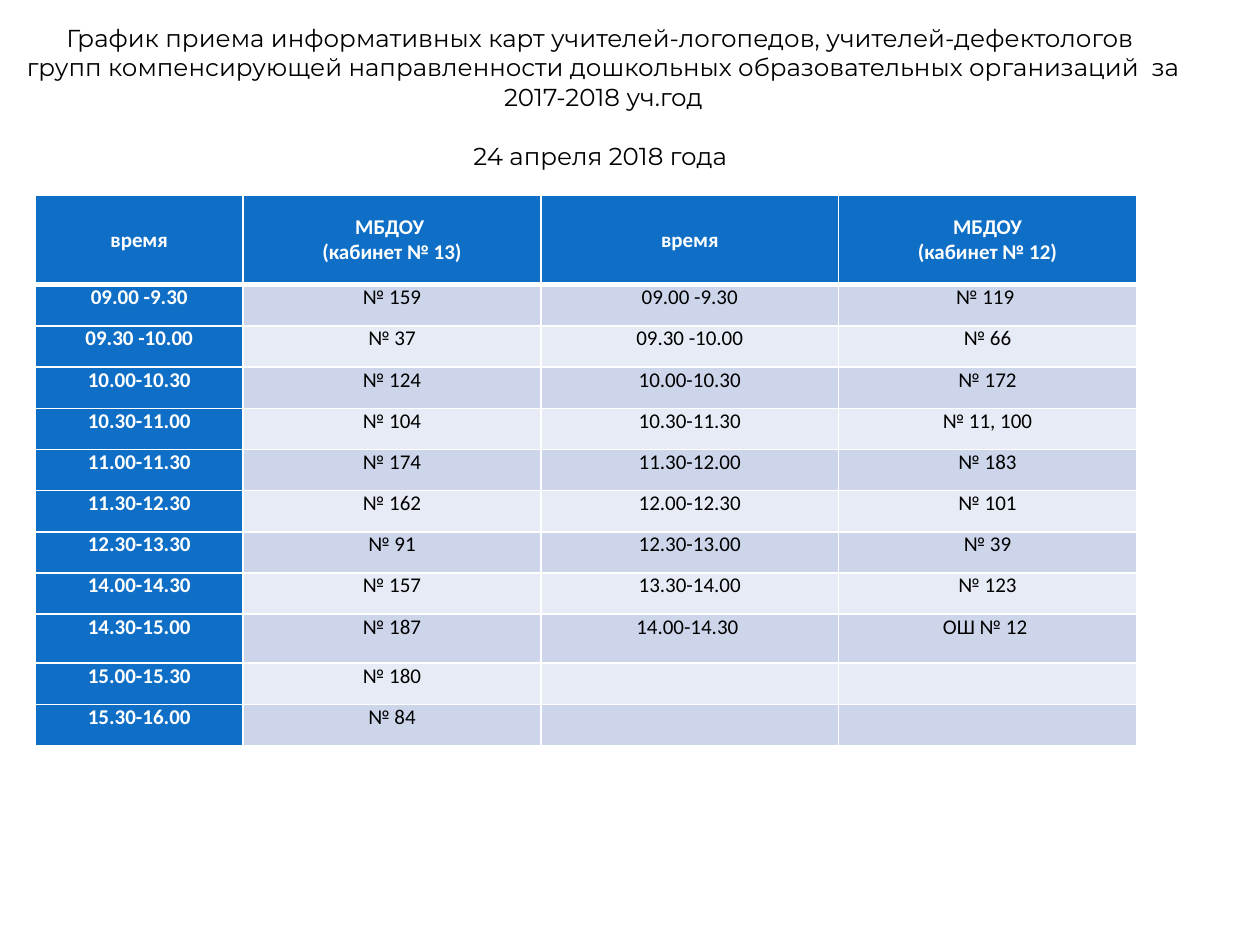
from lxml.etree import SubElement
from pptx import Presentation
from pptx.dml.color import RGBColor
from pptx.enum.text import MSO_ANCHOR as Anchor, MSO_AUTO_SIZE as Fit, PP_ALIGN as Align
from pptx.oxml.ns import qn
from pptx.util import Inches, Pt

WHITE, BLACK, BLUE = "FFFFFF", "000000", "0F6FC6"
BANDS = ["CCD5EA", "E7EBF5"]

TITLE = [
    "График приема информативных карт учителей-логопедов, учителей-дефектологов ",
    "групп компенсирующей направленности дошкольных образовательных организаций  за 2017-2018 уч.год",
    "24 апреля 2018 года ",
]
ROWS = [
    ["время", "МБДОУ \n(кабинет № 13)", "время", "МБДОУ\n(кабинет № 12)"],
    ["09.00 -9.30", "№ 159", "09.00 -9.30", "№ 119 "],
    ["09.30 -10.00", "№ 37", "09.30 -10.00", "№ 66"],
    ["10.00-10.30", "№ 124", "10.00-10.30", "№ 172"],
    ["10.30-11.00", "№ 104", "10.30-11.30", "№ 11, 100"],
    ["11.00-11.30", "№ 174", "11.30-12.00", "№ 183"],
    ["11.30-12.30", "№ 162", "12.00-12.30", "№ 101"],
    ["12.30-13.30", "№ 91", "12.30-13.00", "№ 39"],
    ["14.00-14.30", "№ 157", "13.30-14.00", "№ 123"],
    ["14.30-15.00", "№ 187", "14.00-14.30 ", "ОШ № 12 "],
    ["15.00-15.30", "№ 180", "", ""],
    ["15.30-16.00", "№ 84", "", ""],
]

LEFT, TOP, WIDTH, HEIGHT = 0.28, 1.55, 8.74, 4.37
HEAD, TALL, TALL_ROW = 0.71, 0.39, 9
FIRST = 1.65


def rgb(code):
    return RGBColor.from_string(code)


def put(obj, values):
    for name, value in values.items():
        setattr(obj, name, value)


def write(frame, lines, color, **style):
    frame.text = "\n".join(lines)
    for para in frame.paragraphs:
        para.alignment = Align.CENTER
        for run in para.runs:
            put(run.font, style)
            run.font.color.rgb = rgb(color)


def edge(cell, widths):
    """Draw white borders; widths maps each side (L, R, T, B) to points."""
    props = cell._tc.get_or_add_tcPr()
    for spot, (side, width) in enumerate(widths.items()):
        line = SubElement(props, qn(f"a:ln{side}"), w=str(Pt(width)))
        fill = SubElement(line, qn("a:solidFill"))
        SubElement(fill, qn("a:srgbClr"), val=WHITE)
        props.insert(spot, line)


def add_title(slide):
    title = slide.shapes.title
    put(title, {"left": Inches(0.01), "top": Inches(0.13),
                "width": Inches(9.56), "height": Inches(1.58)})
    frame = title.text_frame
    put(frame, {"word_wrap": True, "auto_size": Fit.NONE,
                "vertical_anchor": Anchor.TOP})
    write(frame, TITLE, BLACK, name="Montserrat", size=Pt(14))
    frame.paragraphs[-1].space_before = Pt(17)


def fill_cell(cell, text, row, col):
    head = row == 0
    strong = head or col == 0
    put(cell, {"margin_left": Inches(0.07), "margin_right": Inches(0.07),
               "margin_top": 0, "margin_bottom": 0,
               "vertical_anchor": Anchor.MIDDLE if head else Anchor.TOP})
    cell.fill.solid()
    cell.fill.fore_color.rgb = rgb(BLUE if strong else BANDS[(row - 1) % 2])
    edge(cell, {"L": 1, "R": 1, "T": 3 if row == 1 else 1, "B": 3 if head else 1})
    write(cell.text_frame, text.split("\n"), WHITE if strong else BLACK,
          name="Calibri", size=Pt(12), bold=strong)


def add_grid(slide):
    count, cols = len(ROWS), len(ROWS[0])
    table = slide.shapes.add_table(count, cols, Inches(LEFT), Inches(TOP),
                                   Inches(WIDTH), Inches(HEIGHT)).table
    table.first_col = True
    for spot, col in enumerate(table.columns):
        col.width = Inches((WIDTH - FIRST) / (cols - 1) if spot else FIRST)
    plain = (HEIGHT - HEAD - TALL) / (count - 2)
    for spot, row in enumerate(table.rows):
        row.height = Inches({0: HEAD, TALL_ROW: TALL}.get(spot, plain))
        for col, text in enumerate(ROWS[spot]):
            fill_cell(table.cell(spot, col), text, spot, col)


def main():
    deck = Presentation()
    put(deck, {"slide_width": Inches(10), "slide_height": Inches(7.5)})
    slide = deck.slides.add_slide(deck.slide_layouts[5])
    add_title(slide)
    add_grid(slide)
    deck.save("out.pptx")


if __name__ == "__main__":
    main()
